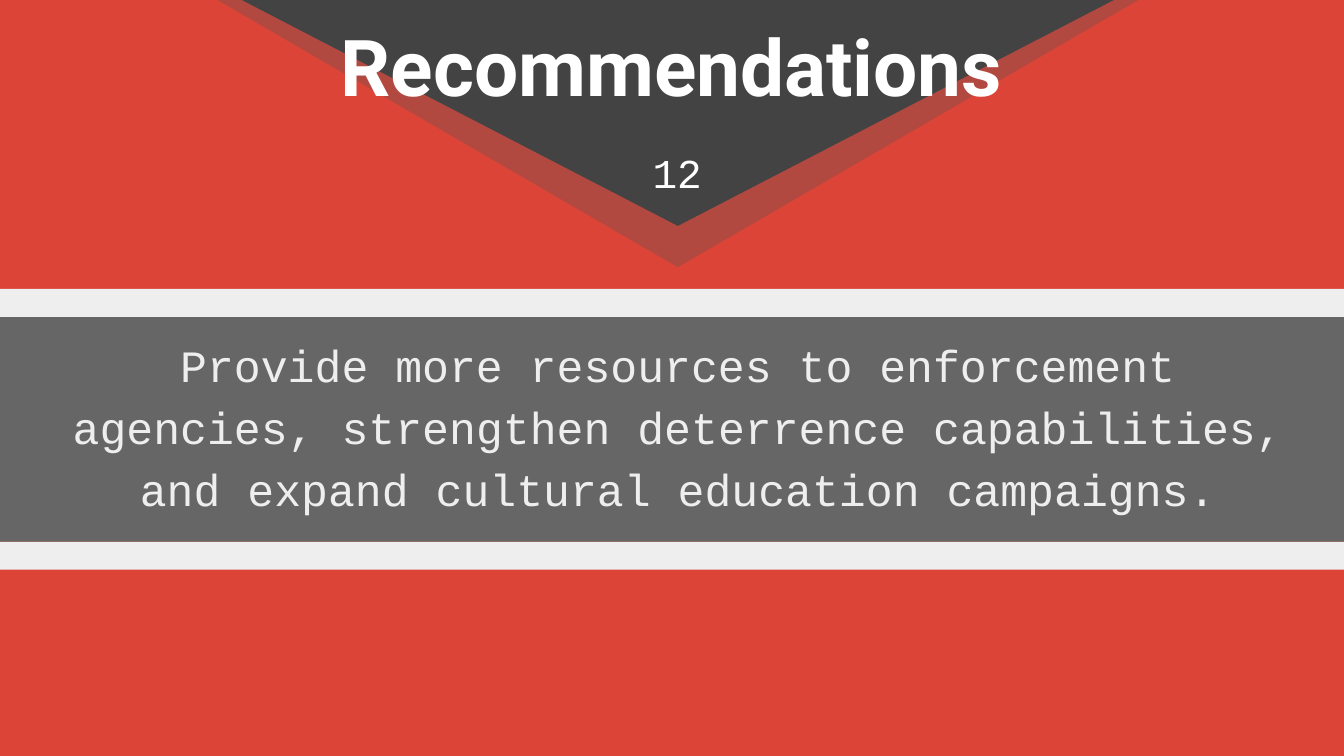
"""Build the Recommendations slide with a chevron header and a statement band."""
from lxml.etree import SubElement
from pptx import Presentation
from pptx.dml.color import RGBColor
from pptx.enum.shapes import MSO_SHAPE as Preset
from pptx.enum.text import MSO_ANCHOR as Anchor, MSO_AUTO_SIZE as AutoSize, PP_ALIGN as Align
from pptx.oxml.ns import qn
from pptx.util import Cm, Pt

COLORS = {
    "background": "DB4437",
    "halo": "AB4B43",
    "chevron": "434343",
    "band": "666666",
    "stripe": "EEEEEE",
    "white": "FFFFFF",
}


def color(name):
    return RGBColor.from_string(COLORS[name])


def write(shape, text, size, font="Courier New", ink="white", bold=False,
          line_spacing=1.0, space_after=0):
    frame = shape.text_frame
    frame.word_wrap = True
    frame.auto_size = AutoSize.NONE
    frame.vertical_anchor = Anchor.TOP
    frame.margin_left = frame.margin_right = Cm(0.25)
    frame.margin_top = frame.margin_bottom = Cm(0.25)
    frame.text = text
    paragraph = frame.paragraphs[0]
    properties = paragraph._p.get_or_add_pPr()
    properties.set("marL", "0")
    properties.set("indent", "0")
    SubElement(properties, qn("a:buNone"))
    paragraph.alignment = Align.CENTER
    paragraph.line_spacing = line_spacing
    paragraph.space_before = Pt(0)
    paragraph.space_after = Pt(space_after)
    style = paragraph.runs[0].font
    style.name, style.size, style.bold = font, Pt(size), bold
    style.color.rgb = color(ink)


class SlideBuilder:
    def __init__(self, slide):
        self.slide = slide
        self.slide.background.fill.solid()
        self.slide.background.fill.fore_color.rgb = color("background")

    def block(self, preset, box, fill, rotation=0, opacity=100):
        shape = self.slide.shapes.add_shape(preset, *map(Cm, box))
        shape.shadow.inherit = False
        shape.rotation = rotation
        shape.fill.solid()
        shape.fill.fore_color.rgb = color(fill)
        shape.line.fill.background()
        if opacity < 100:
            tint = shape.element.spPr.find(".//" + qn("a:srgbClr"))
            SubElement(tint, qn("a:alpha")).set("val", str(opacity * 1000))

    def triangle(self, width, height, fill, opacity=100):
        center = 12.81
        self.block(Preset.ISOSCELES_TRIANGLE, (center - width / 2, 0, width, height),
                   fill, rotation=180, opacity=opacity)

    def bar(self, left, top, width, height, fill):
        self.block(Preset.RECTANGLE, (left, top, width, height), fill)

    def placeholder(self, index, box, text, **style):
        shape = self.slide.placeholders[index]
        shape.left, shape.top, shape.width, shape.height = map(Cm, box)
        write(shape, text, **style)
        shape.element.getparent().append(shape.element)

    def label(self, box, text, **style):
        write(self.slide.shapes.add_textbox(*map(Cm, box)), text, **style)


def main():
    presentation = Presentation()
    presentation.slide_width, presentation.slide_height = Cm(25.4), Cm(14.29)
    builder = SlideBuilder(presentation.slides.add_slide(presentation.slide_layouts[1]))

    builder.triangle(17.4, 5.05, "halo", opacity=85)
    builder.triangle(16.48, 4.27, "chevron")
    builder.bar(-1.32, 10.24, 28.02, 0.53, "stripe")
    builder.bar(-0.3, 5.97, 26.54, 4.27, "band")
    builder.placeholder(0, (0.86, 0.1, 23.67, 2.24), "Recommendations",
                        size=42, font="Roboto", bold=True)
    builder.placeholder(
        1, (0.97, 5.99, 23.67, 4.8),
        "Provide more resources to enforcement agencies, strengthen deterrence "
        "capabilities, and expand cultural education campaigns.",
        size=24, ink="stripe", line_spacing=1.15, space_after=16)
    builder.bar(-1.19, 5.46, 28.02, 0.53, "stripe")
    builder.label((11.76, 2.54, 2.08, 1.52), "12", size=22)

    presentation.save("out.pptx")


if __name__ == "__main__":
    main()
